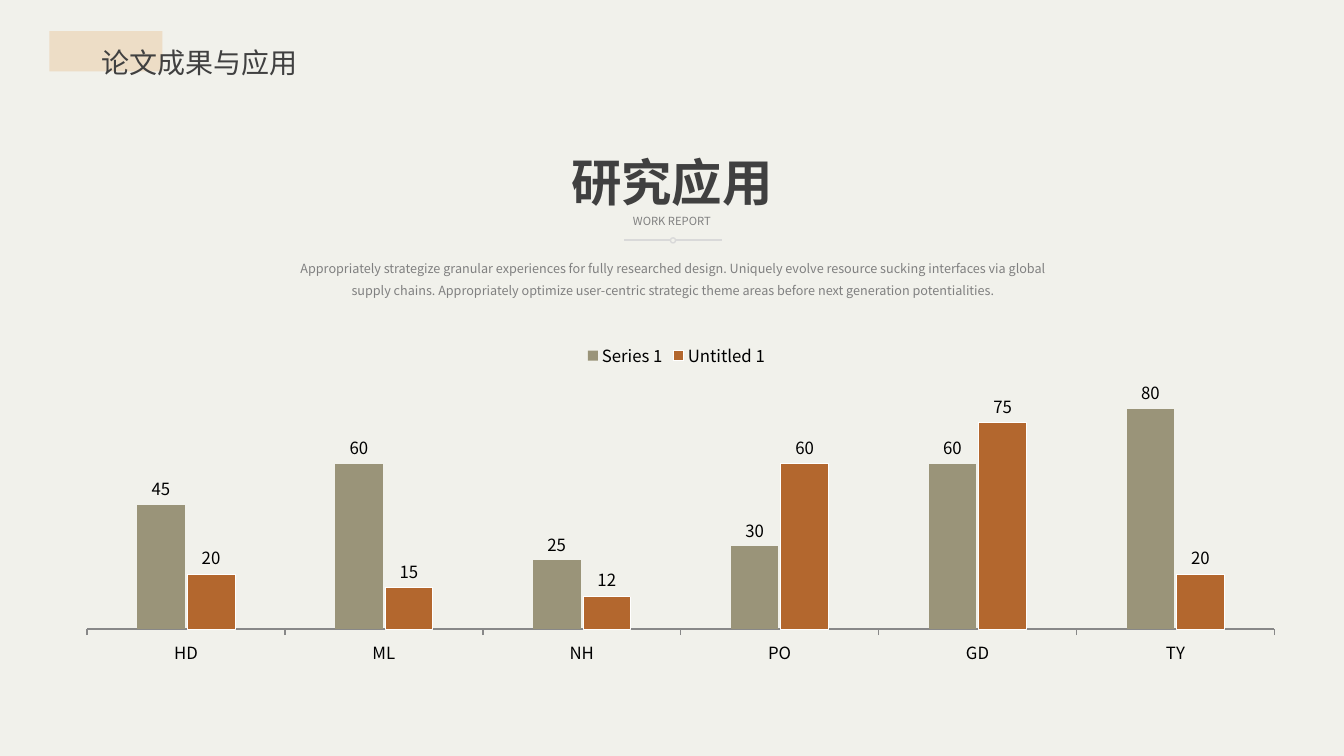
from lxml import etree
from pptx import Presentation
from pptx.chart.data import CategoryChartData
from pptx.dml.color import RGBColor
from pptx.enum.chart import XL_CHART_TYPE as ChartType, XL_LABEL_POSITION as LabelPosition
from pptx.enum.chart import XL_LEGEND_POSITION as LegendPosition, XL_TICK_LABEL_POSITION as TickLabel
from pptx.enum.chart import XL_TICK_MARK as TickMark
from pptx.enum.shapes import MSO_CONNECTOR as Connector, MSO_SHAPE as Shape
from pptx.enum.text import MSO_AUTO_SIZE as AutoSize, PP_ALIGN as Align
from pptx.oxml import parse_xml
from pptx.oxml.ns import nsdecls, qn
from pptx.util import Inches, Pt

FONT = "Noto Sans CJK SC"
PAPER = RGBColor(0xF1, 0xF1, 0xEB)
SAND = RGBColor(0xED, 0xDD, 0xC6)
DARK = RGBColor(0x40, 0x40, 0x40)
GREY = RGBColor(0x80, 0x80, 0x80)
PALE = RGBColor(0xD9, 0xD9, 0xD9)
AXIS = RGBColor(0x88, 0x88, 0x88)
BLACK = RGBColor(0, 0, 0)
WHITE = RGBColor(0xFF, 0xFF, 0xFF)
OLIVE = RGBColor(0x9A, 0x94, 0x79)
RUST = RGBColor(0xB3, 0x67, 0x2E)

CATEGORIES = ["HD", "ML", "NH", "PO", "GD", "TY"]
SERIES = [
    ("Series 1", [45, 60, 25, 30, 60, 80], OLIVE, "0"),
    ("Untitled 1", [20, 15, 12, 60, 75, 20], RUST, "#,##0"),
]
PLOT_LAYOUT = {"x": 0.012, "y": 0.066, "w": 0.983, "h": 0.826}
SUMMARY = (
    "Appropriately strategize granular experiences for fully researched design. "
    "Uniquely evolve resource sucking interfaces via global supply chains. "
    "Appropriately optimize user-centric strategic theme areas before next generation potentialities."
)


def add_text(page, text, place, size, color, align=Align.CENTER, bold=False, spacing=None, before=None):
    """Add a wrapped text box holding one run."""
    box = page.shapes.add_textbox(*map(Inches, place))
    frame = box.text_frame
    frame.word_wrap = True
    frame.auto_size = AutoSize.SHAPE_TO_FIT_TEXT
    para = frame.paragraphs[0]
    para.alignment = align
    para.line_spacing = spacing
    para.space_before = before
    span = para.add_run()
    span.text = text
    span.font.size = Pt(size)
    span.font.bold = bold
    span.font.name = FONT
    span.font.color.rgb = color
    east_asian = etree.SubElement(span.font._element, qn("a:ea"))
    east_asian.set("typeface", FONT)


def add_title_block(page):
    """Add the sand-coloured block behind the page heading."""
    block = page.shapes.add_shape(Shape.RECTANGLE, Inches(0.49), Inches(0.31), Inches(1.12), Inches(0.4))
    block.shadow.inherit = False
    block.fill.solid()
    block.fill.fore_color.rgb = SAND
    block.line.fill.background()


def add_divider(page):
    """Add the grouped rule with a small ring in its middle."""
    group = page.shapes.add_group_shape()
    ring = group.shapes.add_shape(Shape.OVAL, Inches(6.65), Inches(2.36), Inches(0.05), Inches(0.05))
    ring.shadow.inherit = False
    ring.fill.background()
    ring.line.color.rgb = PALE
    ring.line.width = Pt(1)
    for start, end in ((6.19, 6.65), (6.7, 7.16)):
        rule = group.shapes.add_connector(
            Connector.STRAIGHT, Inches(start), Inches(2.38), Inches(end), Inches(2.38))
        rule.line.color.rgb = PALE
        rule.line.width = Pt(1)
        etree.SubElement(rule._element.spPr, qn("a:effectLst"))


def style_font(font):
    """Apply the common chart lettering."""
    font.size = Pt(12)
    font.name = FONT
    font.color.rgb = BLACK


def set_plot_layout(chart):
    """Fix the inner plot area as fractions of the chart."""
    area = chart._chartSpace.chart.plotArea
    for old in area.findall(qn("c:layout")):
        area.remove(old)
    sizes = "".join(f'<c:{key} val="{value}"/>' for key, value in PLOT_LAYOUT.items())
    area.insert(0, parse_xml(
        f'<c:layout {nsdecls("c")}><c:manualLayout><c:layoutTarget val="inner"/>'
        f'<c:xMode val="edge"/><c:yMode val="edge"/>{sizes}</c:manualLayout></c:layout>'))


def style_axes(chart):
    """Show the category axis and hide the value axis."""
    category = chart.category_axis
    category.tick_label_position = TickLabel.LOW
    category.major_tick_mark = TickMark.OUTSIDE
    category.format.line.color.rgb = AXIS
    category.format.line.width = Pt(1)
    style_font(category.tick_labels.font)
    value = chart.value_axis
    value.minimum_scale, value.maximum_scale, value.major_unit = 0, 100, 20
    value.has_major_gridlines = False
    value.major_tick_mark = TickMark.NONE
    value.tick_label_position = TickLabel.NONE
    value.format.line.fill.background()


def style_series(series, color, number_format):
    """Colour a series and label its columns."""
    series.format.fill.solid()
    series.format.fill.fore_color.rgb = color
    series.invert_if_negative = False
    labels = series.data_labels
    labels.show_value = True
    labels.position = LabelPosition.OUTSIDE_END
    labels.number_format = number_format
    labels.number_format_is_linked = False
    style_font(labels.font)


def add_column_chart(page):
    """Add the clustered column chart with its legend."""
    data = CategoryChartData()
    data.categories = CATEGORIES
    for name, values, _, _ in SERIES:
        data.add_series(name, values)
    chart = page.shapes.add_chart(
        ChartType.COLUMN_CLUSTERED, Inches(0.72), Inches(3.29), Inches(11.98), Inches(3.31), data).chart
    style_font(chart.font)
    chart.has_title = False
    chart.has_legend = True
    chart.legend.position = LegendPosition.TOP
    chart.legend.include_in_layout = False
    style_font(chart.legend.font)
    plot = chart.plots[0]
    plot.vary_by_categories = False
    plot.gap_width = 210
    plot.overlap = -5
    for series, (_, _, color, number_format) in zip(plot.series, SERIES):
        style_series(series, color, number_format)
    outline = plot.series[1].format.line
    outline.color.rgb = WHITE
    outline.width = Pt(0.5)
    style_axes(chart)
    set_plot_layout(chart)


def main():
    """Build the slide and save it."""
    deck = Presentation()
    deck.slide_width, deck.slide_height = Inches(13.33), Inches(7.5)
    page = deck.slides.add_slide(deck.slide_layouts[6])
    page.background.fill.solid()
    page.background.fill.fore_color.rgb = PAPER
    add_title_block(page)
    add_text(page, "论文成果与应用", (0.91, 0.24, 3.5, 0.55), 20, DARK, align=Align.JUSTIFY, spacing=1.5)
    add_text(page, SUMMARY, (2.69, 2.46, 7.96, 0.53), 9, GREY, spacing=1.5, before=Pt(1.8))
    add_column_chart(page)
    add_text(page, "WORK REPORT", (5.87, 2.08, 1.59, 0.24), 8, GREY)
    add_text(page, "研究应用", (3.63, 1.45, 6.07, 0.71), 36, DARK, bold=True)
    add_divider(page)
    deck.save("out.pptx")


if __name__ == "__main__":
    main()
